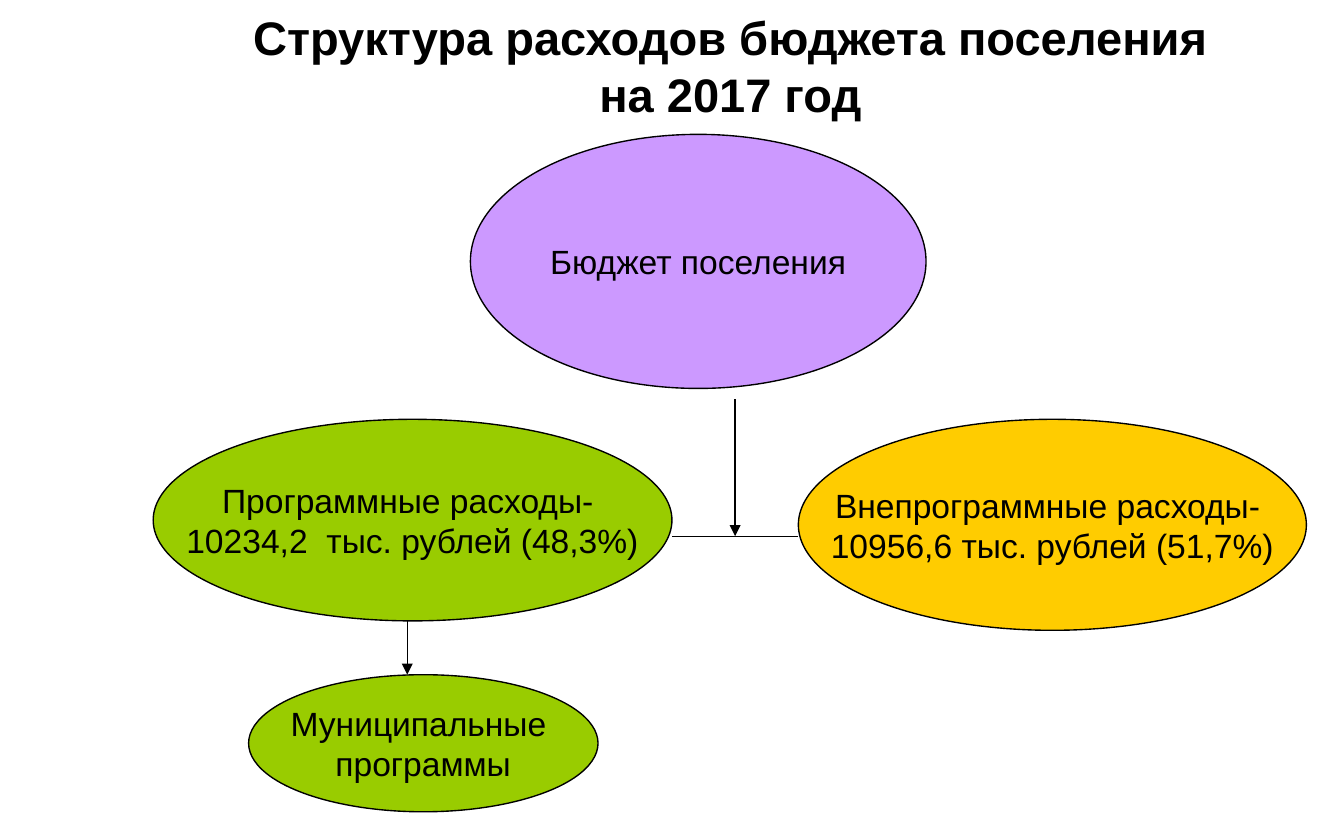
"""Build a slide showing the structure of a settlement's budget spending."""
from pptx import Presentation
from pptx.dml.color import RGBColor
from pptx.enum.shapes import MSO_CONNECTOR as Connector, MSO_SHAPE as Shape
from pptx.enum.text import MSO_ANCHOR as Anchor, MSO_AUTO_SIZE as AutoSize, PP_ALIGN as Align
from pptx.oxml.ns import qn
from pptx.util import Inches, Pt
from lxml.etree import SubElement

FONT = "Arial"
BLACK = "000000"
VIOLET, GREEN, ORANGE = "CC99FF", "99CC00", "FFCC00"

TITLE = ["Структура расходов бюджета поселения", "на 2017 год"]
TITLE_INDENT = 0.87
ELLIPSES = [
    (["Бюджет поселения"], VIOLET, (3.5, 1, 3.39, 1.89)),
    (["Программные расходы- ", "10234,2  тыс. рублей (48,3%)"], GREEN, (1.14, 3.12, 3.86, 1.5)),
    (["Внепрограммные расходы- ", "10956,6 тыс. рублей (51,7%)"], ORANGE, (5.94, 3.12, 3.78, 1.57)),
    (["Муниципальные ", "программы"], GREEN, (1.85, 5.02, 2.6, 1.02)),
]
LINES = [
    ((5.47, 2.97), (5.47, 3.99), True),
    ((5, 3.99), (5.94, 3.99), False),
    ((3.03, 4.62), (3.03, 5.02), True),
]


def color(value):
    return RGBColor.from_string(value)


def write_text(frame, lines, size, bold=False):
    frame.auto_size = AutoSize.NONE
    frame.vertical_anchor = Anchor.MIDDLE
    for index, line in enumerate(lines):
        paragraph = frame.add_paragraph() if index else frame.paragraphs[0]
        paragraph.alignment = Align.CENTER
        run = paragraph.add_run()
        run.text = line
        run.font.name = FONT
        run.font.size = Pt(size)
        run.font.bold = bold
        run.font.color.rgb = color(BLACK)


def style_line(line):
    line.color.rgb = color(BLACK)
    line.width = Pt(0.75)


def add_title(slide):
    title = slide.shapes.title
    title.left, title.top, title.width, title.height = map(Inches, (0, 0.21, 10, 0.55))
    write_text(title.text_frame, TITLE, 25.2, bold=True)
    properties = title.text_frame.paragraphs[0]._p.get_or_add_pPr()
    properties.set("marL", str(Inches(TITLE_INDENT)))


def add_ellipse(slide, lines, fill, box):
    ellipse = slide.shapes.add_shape(Shape.OVAL, *map(Inches, box))
    ellipse.shadow.inherit = False
    ellipse.fill.solid()
    ellipse.fill.fore_color.rgb = color(fill)
    style_line(ellipse.line)
    ellipse.text_frame.word_wrap = False
    write_text(ellipse.text_frame, lines, 18)


def add_line(slide, start, end, arrow):
    connector = slide.shapes.add_connector(Connector.STRAIGHT, *map(Inches, start + end))
    style_line(connector.line)
    if arrow:
        SubElement(connector.line._get_or_add_ln(), qn("a:tailEnd"), type="triangle")
    SubElement(connector._element.spPr, qn("a:effectLst"))


def main():
    presentation = Presentation()
    presentation.slide_width, presentation.slide_height = Inches(10), Inches(6.25)
    slide = presentation.slides.add_slide(presentation.slide_layouts[5])
    add_title(slide)
    for lines, fill, box in ELLIPSES:
        add_ellipse(slide, lines, fill, box)
    for start, end, arrow in LINES:
        add_line(slide, start, end, arrow)
    presentation.save("out.pptx")


if __name__ == "__main__":
    main()
